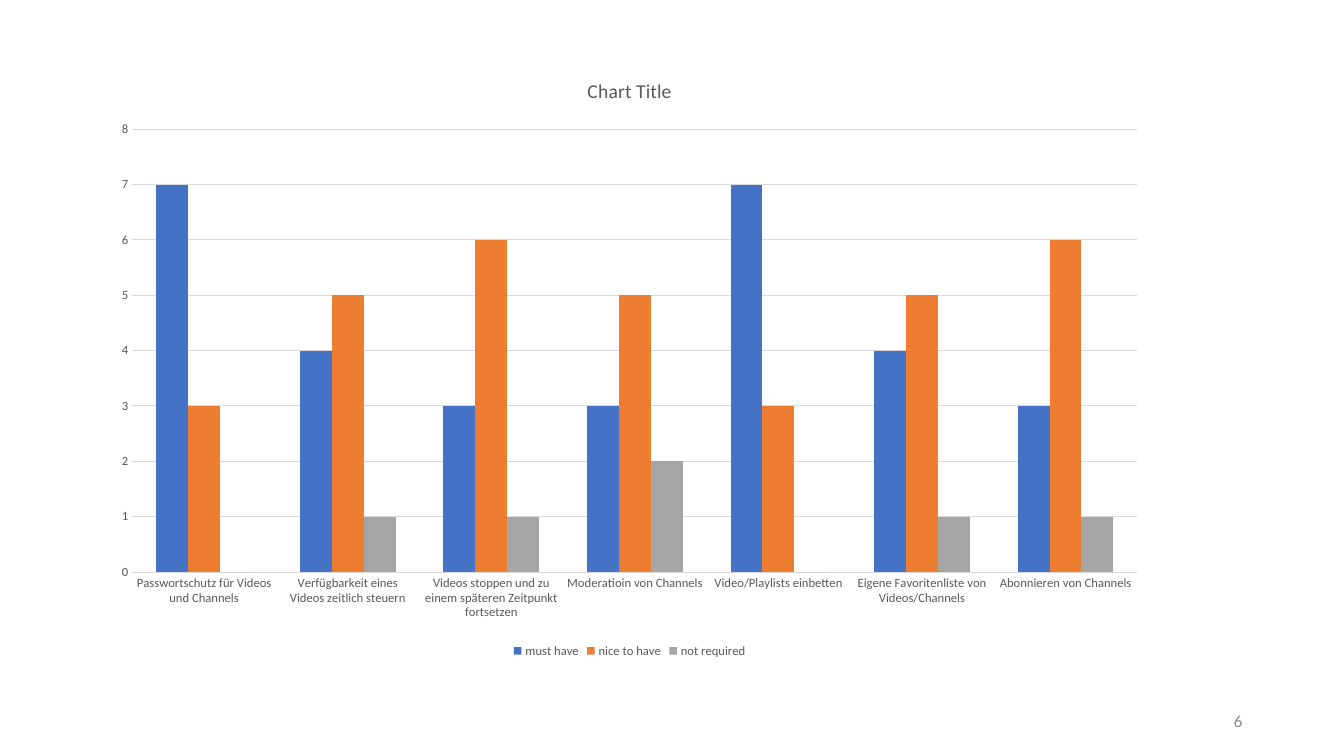
from dataclasses import dataclass

from pptx import Presentation
from pptx.chart.data import CategoryChartData
from pptx.dml.color import RGBColor
from pptx.enum.chart import XL_CHART_TYPE, XL_LEGEND_POSITION, XL_TICK_MARK
from pptx.enum.text import MSO_ANCHOR, PP_ALIGN
from pptx.util import Inches, Pt

COLUMNS = XL_CHART_TYPE.COLUMN_CLUSTERED
BOTTOM = XL_LEGEND_POSITION.BOTTOM
NO_TICK = XL_TICK_MARK.NONE
MIDDLE = MSO_ANCHOR.MIDDLE
RIGHT = PP_ALIGN.RIGHT

FONT = "Calibri"
LABEL_GRAY = "595959"
GRID_GRAY = "D9D9D9"
NUMBER_GRAY = "8C8C8C"


@dataclass
class Rating:
    name: str
    votes: tuple
    color: str


FEATURES = (
    "Passwortschutz für Videos und Channels",
    "Verfügbarkeit eines Videos zeitlich steuern",
    "Videos stoppen und zu einem späteren Zeitpunkt fortsetzen",
    "Moderatioin von Channels",
    "Video/Playlists einbetten",
    "Eigene Favoritenliste von Videos/Channels",
    "Abonnieren von Channels",
)
RATINGS = (
    Rating("must have", (7, 4, 3, 3, 7, 4, 3), "4472C4"),
    Rating("nice to have", (3, 5, 6, 5, 3, 5, 6), "ED7D31"),
    Rating("not required", (0, 1, 1, 2, 0, 1, 1), "A5A5A5"),
)


def rgb(hex_color: str) -> RGBColor:
    return RGBColor.from_string(hex_color)


def style_font(font, size: float, color: str = LABEL_GRAY) -> None:
    font.name = FONT
    font.size = Pt(size)
    font.bold = False
    font.color.rgb = rgb(color)


def write_text(frame, text: str, *, size: float, color: str = LABEL_GRAY, align=None) -> None:
    paragraph = frame.paragraphs[0]
    paragraph.alignment = align
    run = paragraph.add_run()
    run.text = text
    style_font(run.font, size, color)


def style_axis(axis) -> None:
    axis.major_tick_mark = NO_TICK
    axis.minor_tick_mark = NO_TICK
    axis.format.line.fill.background()
    style_font(axis.tick_labels.font, 9)


def add_rating_chart(slide) -> None:
    data = CategoryChartData()
    data.categories = FEATURES
    for rating in RATINGS:
        data.add_series(rating.name, rating.votes)
    chart = slide.shapes.add_chart(
        COLUMNS, Inches(1), Inches(0.56), Inches(10.49), Inches(6.01), data
    ).chart
    style_font(chart.font, 10, "000000")

    chart.has_title = True
    write_text(chart.chart_title.text_frame, "Chart Title", size=14)
    chart.chart_title.include_in_layout = False

    chart.has_legend = True
    chart.legend.position = BOTTOM
    chart.legend.include_in_layout = False
    style_font(chart.legend.font, 9)

    style_axis(chart.category_axis)
    votes_axis = chart.value_axis
    style_axis(votes_axis)
    votes_axis.minimum_scale = 0
    votes_axis.maximum_scale = 8
    votes_axis.major_unit = 1
    grid = votes_axis.major_gridlines.format.line
    grid.color.rgb = rgb(GRID_GRAY)
    grid.width = Pt(0.75)

    plot = chart.plots[0]
    plot.gap_width = 150
    plot.overlap = 0
    plot.vary_by_categories = False
    for series, rating in zip(plot.series, RATINGS):
        series.format.fill.solid()
        series.format.fill.fore_color.rgb = rgb(rating.color)


def add_page_number(slide, number: str) -> None:
    frame = slide.shapes.add_textbox(
        Inches(9.42), Inches(6.95), Inches(3), Inches(0.4)
    ).text_frame
    frame.word_wrap = True
    frame.vertical_anchor = MIDDLE
    write_text(frame, number, size=12, color=NUMBER_GRAY, align=RIGHT)


def main() -> None:
    deck = Presentation()
    deck.slide_width = Inches(13.33)
    deck.slide_height = Inches(7.5)
    slide = deck.slides.add_slide(deck.slide_layouts[6])
    add_page_number(slide, "6")
    add_rating_chart(slide)
    deck.save("out.pptx")


if __name__ == "__main__":
    main()
